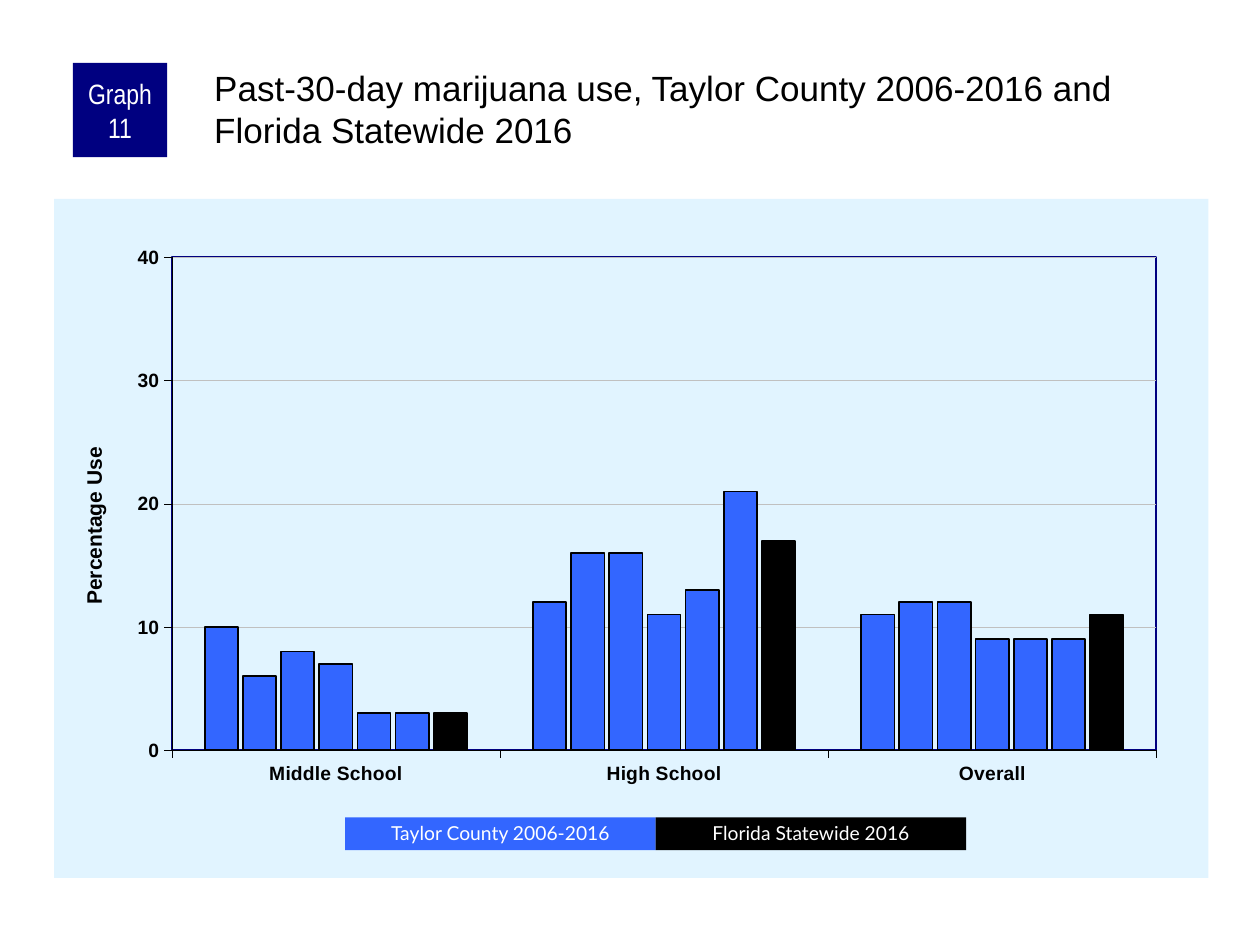
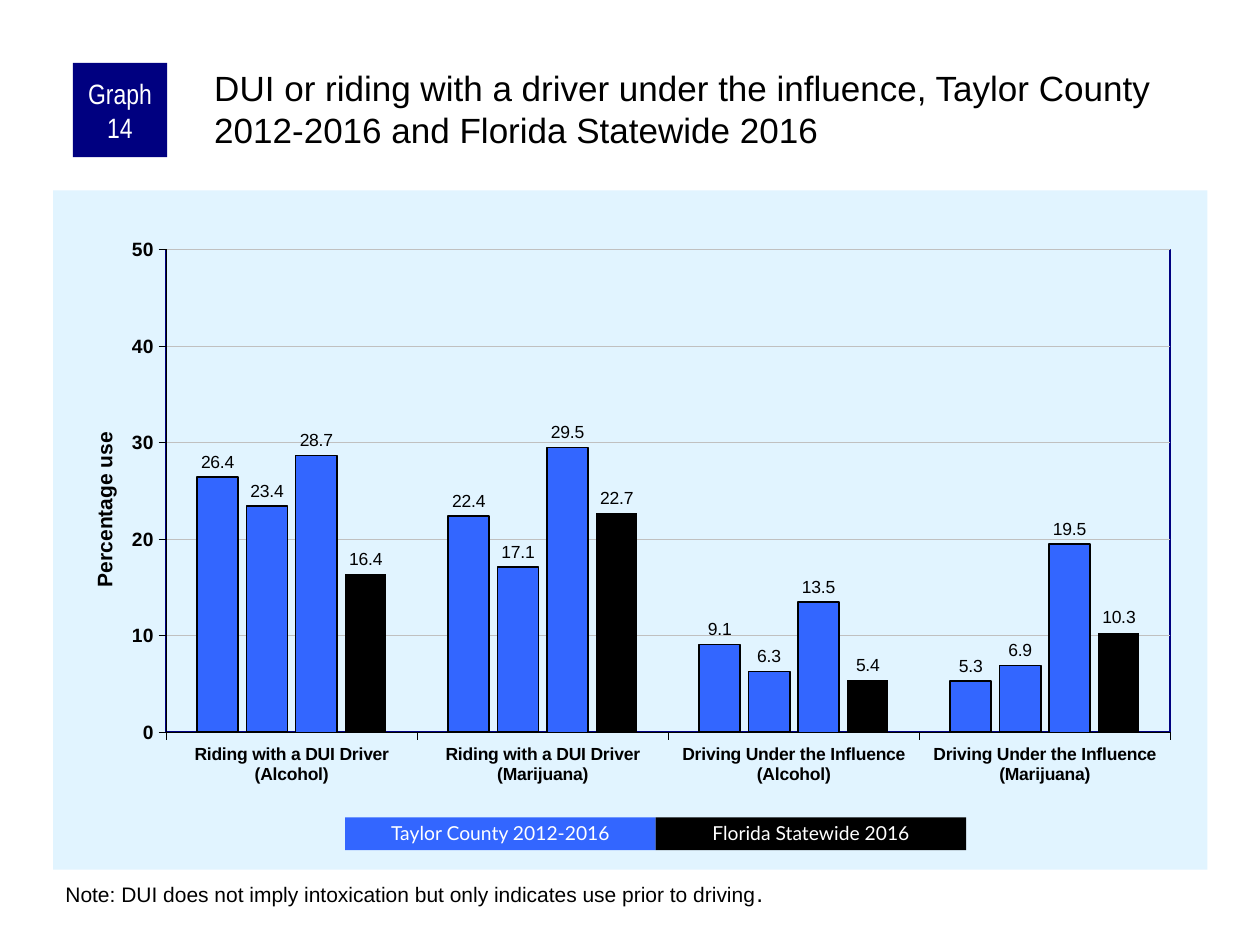
from lxml import etree
from pptx import Presentation, util as u
from pptx.chart import data as chart_data
from pptx.dml.color import RGBColor
from pptx.enum import chart as chart_enum, shapes, text
from pptx.oxml import parse_xml
from pptx.oxml.ns import nsdecls, qn

BLACK = RGBColor(0x00, 0x00, 0x00)
WHITE = RGBColor(0xFF, 0xFF, 0xFF)
NAVY = RGBColor(0x00, 0x00, 0x80)
BLUE = RGBColor(0x33, 0x66, 0xFF)
PALE_BLUE = RGBColor(0xE1, 0xF4, 0xFF)
SILVER = RGBColor(0xC0, 0xC0, 0xC0)

CENTER = text.PP_ALIGN.CENTER
LEFT = text.PP_ALIGN.LEFT
MIDDLE = text.MSO_ANCHOR.MIDDLE
TOP = text.MSO_ANCHOR.TOP

BADGE = dict(at=(1.47, 1.27, 1.9, 1.9), fill=NAVY, align=CENTER, anchor=MIDDLE,
             insets=(0.13, 0, 0.13, 0), spacing=None, font="Arial Narrow", size=16, color=WHITE)
TITLE = dict(at=(4.24, 1.27, 20.12, 2.11), fill=None, align=LEFT, anchor=TOP,
             insets=(0.08, 0.08, 0, 0), spacing=None, font="Arial", size=20, color=BLACK)
COUNTY = dict(at=(6.96, 16.48, 6.26, 0.66), fill=BLUE, align=CENTER, anchor=MIDDLE,
              insets=(0.25, 0.13, 0.25, 0.13), spacing=0.9, font="Lato", size=11, color=WHITE)
STATE = COUNTY | dict(at=(13.22, 16.48, 6.26, 0.66), fill=BLACK)
NOTE = TITLE | dict(at=(1.07, 17.58, 23.29, 0.86), insets=COUNTY["insets"], size=12)

GRAPHS = [
    dict(
        boxes=[
            (BADGE, ["Graph 11"]),
            (TITLE, ["Past-30-day marijuana use, Taylor County 2006-2016 and Florida Statewide 2016"]),
            (COUNTY, ["Taylor County 2006-2016"]),
            (STATE, ["Florida Statewide 2016"]),
        ],
        at=(1.09, 4.01), plot=(0.102, 0.086, 0.853, 0.726),
        axis_title="Percentage Use", axis_title_at=(0.02, 0.36),
        maximum=40, gap=200, overlap=-15, category_size=11, labels=False,
        categories=["Middle School", "High School", "Overall"],
        values=[(10, 12, 11), (6, 16, 12), (8, 16, 12), (7, 11, 9),
                (3, 13, 9), (3, 21, 9), (3, 17, 11)],
        line_widths=[1] * 7,
    ),
    dict(
        boxes=[
            (BADGE, ["Graph 14"]),
            (TITLE, ["DUI or riding with a driver under the influence, "
                     "Taylor County 2012-2016 and Florida Statewide 2016"]),
            (NOTE, ["Note: DUI does not imply intoxication but only indicates use prior to driving", "."]),
            (COUNTY, ["Taylor County 2012-2016"]),
            (STATE, ["Florida Statewide 2016"]),
        ],
        at=(1.07, 3.84), plot=(0.098, 0.087, 0.87, 0.711),
        axis_title="Percentage use", axis_title_at=(0.03, 0.35),
        maximum=50, gap=150, overlap=-20, category_size=10, labels=True,
        categories=["Riding with a DUI Driver (Alcohol)", "Riding with a DUI Driver (Marijuana)",
                    "Driving Under the Influence (Alcohol)", "Driving Under the Influence (Marijuana)"],
        values=[(26.4, 22.4, 9.1, 5.3), (23.4, 17.1, 6.3, 6.9),
                (28.7, 29.5, 13.5, 19.5), (16.4, 22.7, 5.4, 10.3)],
        line_widths=[1, 1, 0.75, None],
    ),
]


def format_font(font, name, size, color, bold=False):
    for attribute, value in dict(name=name, size=u.Pt(size), bold=bold).items():
        setattr(font, attribute, value)
    font.color.rgb = color


def set_layout(parent, index, inner, fractions):
    for old_layout in parent.findall(qn("c:layout")):
        parent.remove(old_layout)
    layout = parse_xml(f"<c:layout {nsdecls('c')}><c:manualLayout/></c:layout>")
    settings = {"layoutTarget": "inner"} if inner else {}
    settings |= {"xMode": "edge", "yMode": "edge"}
    settings |= dict(zip("xywh", fractions))
    for tag, value in settings.items():
        etree.SubElement(layout[0], qn(f"c:{tag}")).set("val", str(value))
    parent.insert(index, layout)


presentation = Presentation()
presentation.slide_width = u.Cm(25.4)
presentation.slide_height = u.Cm(19.05)

for graph in GRAPHS:
    slide = presentation.slides.add_slide(presentation.slide_layouts[6])

    data = chart_data.CategoryChartData(number_format="0.0" if graph["labels"] else "0")
    data.categories = graph["categories"]
    for number, values in enumerate(graph["values"], 1):
        data.add_series(f"Series {number}", values)
    left, top = graph["at"]
    chart = slide.shapes.add_chart(
        chart_enum.XL_CHART_TYPE.COLUMN_CLUSTERED,
        u.Cm(left), u.Cm(top), u.Cm(23.27), u.Cm(13.69), data).chart
    chart.has_title = False
    chart.has_legend = False
    format_font(chart.font, "Arial", 10, BLACK)

    plot = chart.plots[0]
    for attribute, value in dict(gap_width=graph["gap"], overlap=graph["overlap"],
                                 vary_by_categories=False).items():
        setattr(plot, attribute, value)

    value_axis = chart.value_axis
    for attribute, value in dict(minimum_scale=0, maximum_scale=graph["maximum"], major_unit=10,
                                 has_major_gridlines=True).items():
        setattr(value_axis, attribute, value)
    value_axis.tick_labels.number_format = "0"
    value_axis.tick_labels.number_format_is_linked = False
    value_axis.major_gridlines.format.line.color.rgb = SILVER
    value_axis.major_gridlines.format.line.width = u.Pt(0.25)
    for axis, size in ((chart.category_axis, graph["category_size"]), (value_axis, 11)):
        axis.major_tick_mark = chart_enum.XL_TICK_MARK.OUTSIDE
        axis.format.line.color.rgb = BLACK
        axis.format.line.width = u.Pt(0.25)
        format_font(axis.tick_labels.font, "Arial", size, BLACK, True)

    title_frame = value_axis.axis_title.text_frame
    title_frame.text = graph["axis_title"]
    format_font(title_frame.paragraphs[0].runs[0].font, "Arial", 12, BLACK, True)
    title_element = title_frame._txBody.getparent().getparent()
    set_layout(title_element, 1, False, graph["axis_title_at"])

    for series, line_width in zip(plot.series, graph["line_widths"]):
        series.format.fill.solid()
        series.format.fill.fore_color.rgb = BLUE
        if line_width:
            series.format.line.color.rgb = BLACK
            series.format.line.width = u.Pt(line_width)
        else:
            series.format.line.fill.background()
        if graph["labels"]:
            for attribute, value in dict(show_value=True, number_format="0.0",
                                         number_format_is_linked=False,
                                         position=chart_enum.XL_LABEL_POSITION.OUTSIDE_END).items():
                setattr(series.data_labels, attribute, value)
            format_font(series.data_labels.font, "Arial", 10, BLACK)
    series.format.fill.fore_color.rgb = BLACK

    chart_element = chart._chartSpace.find(qn("c:chart"))
    plot_area = chart_element.find(qn("c:plotArea"))
    set_layout(plot_area, 0, True, graph["plot"])
    plot_area.append(parse_xml(
        f'<c:spPr {nsdecls("c", "a")}><a:noFill/><a:ln w="12700"><a:solidFill>'
        f'<a:srgbClr val="{NAVY}"/></a:solidFill></a:ln></c:spPr>'))
    chart_element.addnext(parse_xml(
        f'<c:spPr {nsdecls("c", "a")}><a:solidFill><a:srgbClr val="{PALE_BLUE}"/></a:solidFill>'
        f'<a:ln><a:noFill/></a:ln></c:spPr>'))

    for style, pieces in graph["boxes"]:
        position = [u.Cm(length) for length in style["at"]]
        if style["fill"] is None:
            shape = slide.shapes.add_textbox(*position)
        else:
            shape = slide.shapes.add_shape(shapes.MSO_SHAPE.RECTANGLE, *position)
            shape.shadow.inherit = False
            shape.fill.solid()
            shape.fill.fore_color.rgb = style["fill"]
            shape.line.fill.background()
        frame = shape.text_frame
        frame.word_wrap = True
        frame.vertical_anchor = style["anchor"]
        for side, inset in zip(("left", "top", "right", "bottom"), style["insets"]):
            setattr(frame, f"margin_{side}", u.Cm(inset))
        paragraph = frame.paragraphs[0]
        paragraph.alignment = style["align"]
        paragraph.line_spacing = style["spacing"]
        for index, piece in enumerate(pieces):
            run = paragraph.add_run()
            run.text = piece
            format_font(run.font, style["font"], style["size"] + 2 * index, style["color"])

presentation.save("out.pptx")
